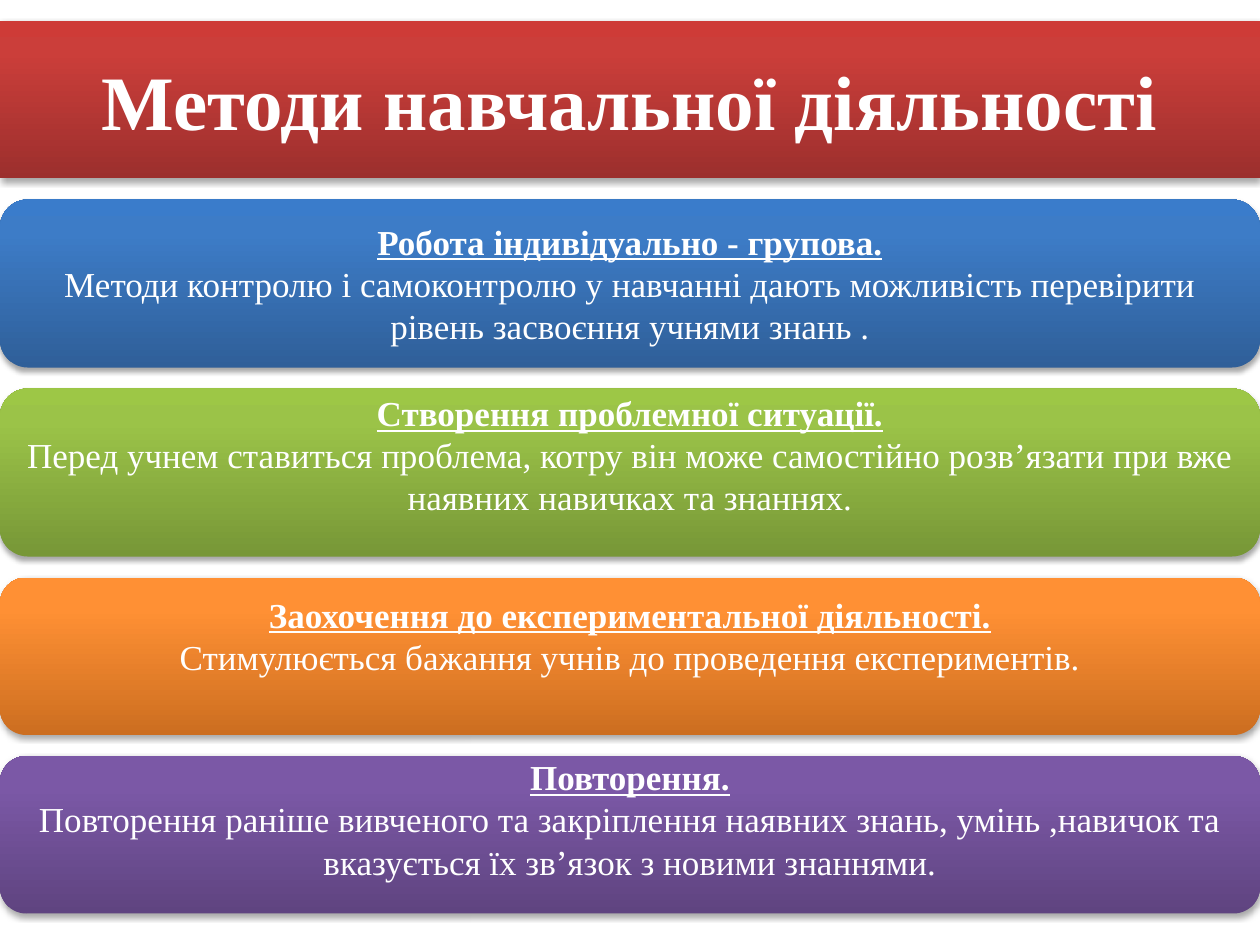
from lxml.etree import SubElement
from pptx import Presentation
from pptx.dml.color import RGBColor
from pptx.enum.shapes import MSO_SHAPE
from pptx.enum.text import MSO_ANCHOR, MSO_AUTO_SIZE, PP_ALIGN
from pptx.oxml.ns import qn
from pptx.util import Pt

PX = 7620  # 120 px to the inch
WIDE, HIGH = 1200, 900


def write(para, text, size=20, bold=False, under=False, color="FFFFFF"):
    para.alignment = PP_ALIGN.CENTER
    para.space_before = Pt(0)
    run = para.add_run()
    run.text = text
    font = run.font
    font.name, font.size = "Times New Roman", Pt(size)
    font.bold, font.underline = bold, under
    font.color.rgb = RGBColor.from_string(color)


def paint(shape, tones):
    # Three-stop gradient, dark at the bottom
    shape.fill.gradient()
    shape.fill.gradient_angle = 90
    shape.line.fill.background()
    props = shape.element.spPr
    stops = props.find(".//" + qn("a:gsLst"))
    stops.clear()
    for pos, tone in zip((0, 80, 100), tones):
        stop = SubElement(stops, qn("a:gs"), pos=str(pos * 1000))
        SubElement(stop, qn("a:srgbClr"), val=tone)

    # Soft shadow below
    shape.shadow.inherit = False
    shade = SubElement(props.find(qn("a:effectLst")), qn("a:outerShdw"),
                       blurRad="40000", dist="23000", dir="5400000",
                       rotWithShape="0")
    black = SubElement(shade, qn("a:srgbClr"), val="000000")
    SubElement(black, qn("a:alpha"), val="35000")


deck = Presentation()
deck.slide_width, deck.slide_height = WIDE * PX, HIGH * PX
slide = deck.slides.add_slide(deck.slide_layouts[5])

# Title band
title = slide.shapes.title
title.left, title.top = 0, 20 * PX
title.width, title.height = WIDE * PX, 150 * PX
paint(title, ("9C2F2D", "CB3E3A", "CE3B37"))
frame = title.text_frame
frame.vertical_anchor = MSO_ANCHOR.MIDDLE
frame.auto_size = MSO_AUTO_SIZE.NONE
write(frame.paragraphs[0], "Методи навчальної діяльності", size=44, bold=True)

# Methods: height, room below the text, colours, heading, body
cards = [
    (160, 0, ("2F5F99", "3D7CC7", "3A7CCB"),
     "Робота індивідуально - групова.",
     "Методи контролю і самоконтролю у навчанні дають можливість перевірити "
     "рівень засвоєння учнями знань ."),
    (160, 34, ("779737", "9BC348", "9DC746"),
     "Створення проблемної ситуації.",
     "Перед учнем ставиться проблема, котру він може самостійно розв’язати "
     "при вже наявних навичках та знаннях."),
    (150, 40, ("CC6E20", "FF9034", "FF9136"),
     "Заохочення до експериментальної діяльності.",
     "Стимулюється бажання учнів до проведення експериментів."),
    (150, 30, ("5F4480", "7B58A6", "7C57A8"),
     "Повторення.",
     "Повторення раніше вивченого та закріплення наявних знань, умінь "
     ",навичок та вказується їх зв’язок з новими знаннями."),
]

# Stack of cards with equal gaps
top, gap = 190, 20
for high, room, tones, head, body in cards:
    card = slide.shapes.add_shape(MSO_SHAPE.ROUNDED_RECTANGLE,
                                  0, top * PX, WIDE * PX, high * PX)
    paint(card, tones)
    frame = card.text_frame
    frame.word_wrap = True
    frame.vertical_anchor = MSO_ANCHOR.MIDDLE
    frame.margin_top, frame.margin_bottom = 0, room * PX
    write(frame.paragraphs[0], head, bold=True, under=True)
    write(frame.add_paragraph(), body)
    top += high + gap

deck.save("out.pptx")
